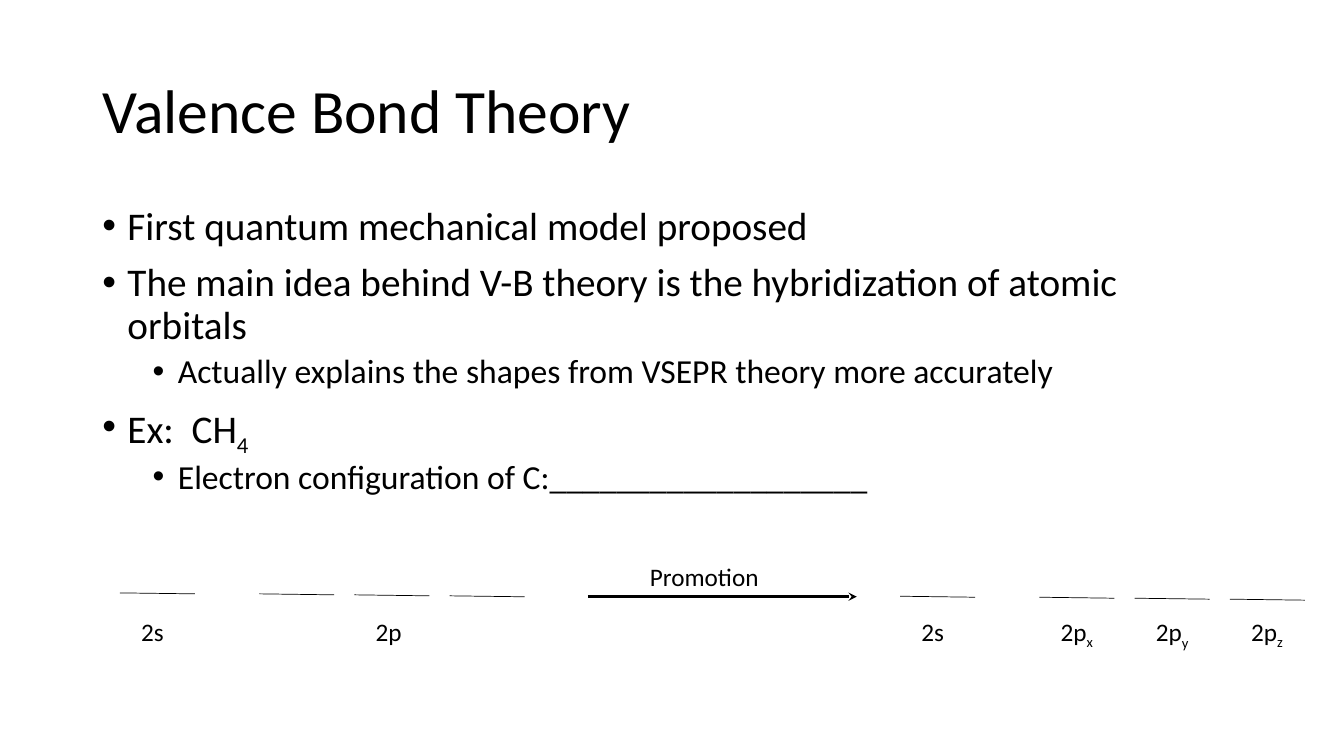
from lxml import etree
from pptx import Presentation
from pptx import util as u
from pptx.dml import color
from pptx.enum import shapes, text
from pptx.oxml import ns

BLACK = "000000"


def write(para, words, size, subscript=""):
    para.font.size = u.Pt(size)
    para.font.name = "Calibri"
    para.font.color.rgb = color.RGBColor.from_string(BLACK)
    para.add_run().text = words
    if subscript:
        span = para.add_run()
        span.text = subscript
        span._r.get_or_add_rPr().set("baseline", "-25000")


def draw_line(x1, y1, x2, y2, width):
    line = page.shapes.add_connector(
        shapes.MSO_CONNECTOR.STRAIGHT, u.Pt(x1), u.Pt(y1), u.Pt(x2), u.Pt(y2))
    line.line.color.rgb = color.RGBColor.from_string(BLACK)
    line.line.width = u.Pt(width)
    etree.SubElement(line._element.spPr, ns.qn("a:effectLst"))
    return line


deck = Presentation()
deck.slide_width, deck.slide_height = u.Pt(960), u.Pt(540)
page = deck.slides.add_slide(deck.slide_layouts[5])

# Title
title = page.shapes.title
title.left, title.top, title.width, title.height = u.Pt(66), u.Pt(28.8), u.Pt(828), u.Pt(104.4)
title.text_frame.vertical_anchor = text.MSO_ANCHOR.MIDDLE
heading = title.text_frame.paragraphs[0]
heading.alignment = text.PP_ALIGN.LEFT
heading.line_spacing = 0.9
write(heading, "Valence Bond Theory", 44)

# Bulleted points: level, words, subscript
points = [
    (0, "First quantum mechanical model proposed", ""),
    (0, "The main idea behind V-B theory is the hybridization of atomic orbitals", ""),
    (1, "Actually explains the shapes from VSEPR theory more accurately", ""),
    (0, "Ex:  CH", "4"),
    (1, "Electron configuration of C:___________________", ""),
]
body = page.shapes.add_textbox(u.Pt(66), u.Pt(144), u.Pt(828), u.Pt(221))
body.text_frame.word_wrap = True
for index, (level, words, subscript) in enumerate(points):
    para = body.text_frame.paragraphs[0] if index == 0 else body.text_frame.add_paragraph()
    para.level = level
    para.line_spacing = 0.9
    para.space_before = u.Pt(5 if level else 10)
    write(para, words, 24 if level else 28, subscript)
    layout = para._p.get_or_add_pPr()
    layout.set("marL", str(u.Pt(54 if level else 18)))
    layout.set("indent", str(u.Pt(-18)))
    bullet_font = etree.Element(ns.qn("a:buFont"), typeface="Arial")
    bullet = etree.Element(ns.qn("a:buChar"), char="•")
    defaults = layout.find(ns.qn("a:defRPr"))
    defaults.addprevious(bullet_font)
    defaults.addprevious(bullet)

# Orbital lines before and after promotion, each group sloping slightly
orbital_offsets = [0, 99.5, 167.5, 235.5]
before, after = 85.7, 643
for start, top in [(before, 423.5), (after, 425.9)]:
    for step, offset in enumerate(orbital_offsets):
        x, y = start + offset, top + 0.7 * step
        draw_line(x, y, x + 53.5, y + 0.7, 0.5)

# Promotion arrow
arrow = draw_line(420, 426.2, 612, 426.2, 2)
etree.SubElement(arrow.line._get_or_add_ln(), ns.qn("a:tailEnd"), type="stealth")

# Labels: left, top, width, words, subscript
s_orbital, px_orbital, py_orbital, pz_orbital = orbital_offsets
labels = [
    (457.2, 397.5, 100, "Promotion", ""),
    (before + s_orbital + 8, 436.5, 38, "2s", ""),
    (before + py_orbital + 8, 437, 38, "2p", ""),
    (after + s_orbital + 8, 436.5, 38, "2s", ""),
    (after + px_orbital + 8, 436.5, 38, "2p", "x"),
    (after + py_orbital + 8, 437, 46, "2p", "y"),
    (after + pz_orbital + 8, 436.5, 38, "2p", "z"),
]
for left, top, width, words, subscript in labels:
    box = page.shapes.add_textbox(u.Pt(left), u.Pt(top), u.Pt(width), u.Pt(29))
    box.text_frame.word_wrap = True
    write(box.text_frame.paragraphs[0], words, 18, subscript)

deck.save("out.pptx")
